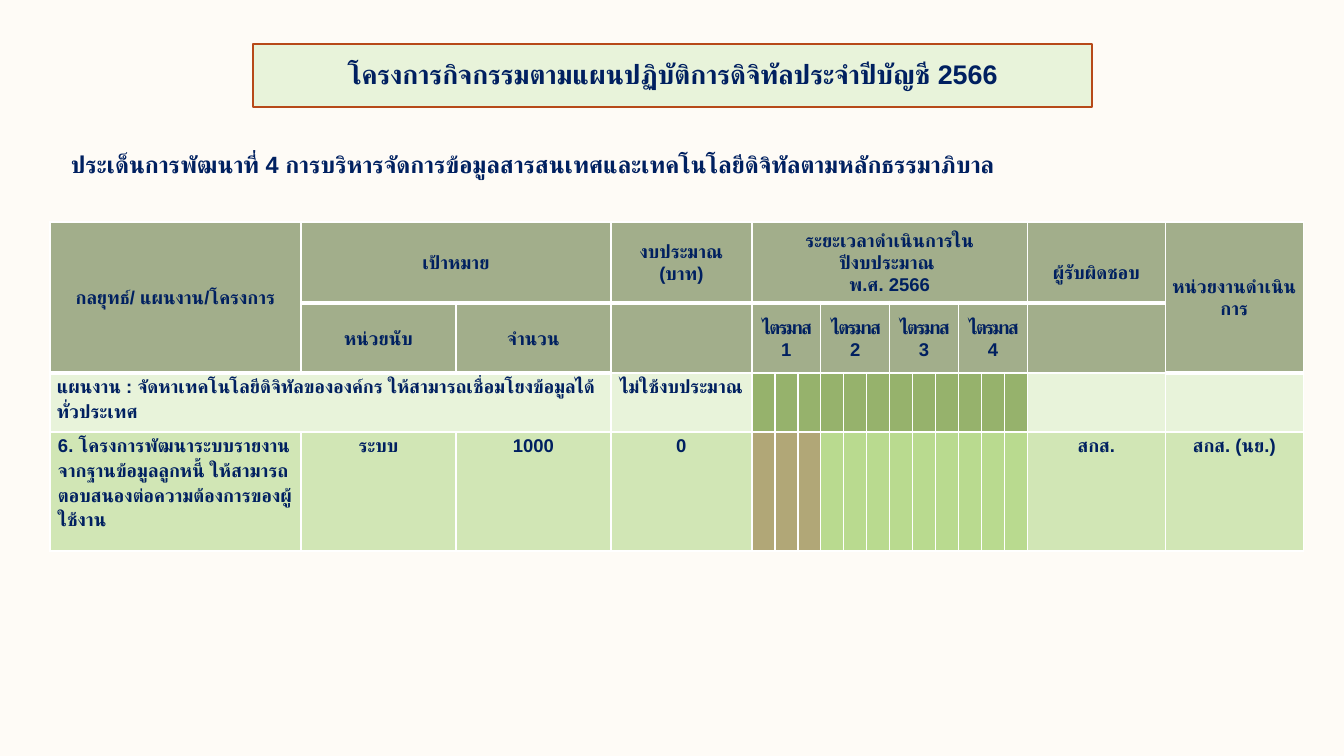
from lxml import etree
from pptx import Presentation
from pptx.dml.color import RGBColor
from pptx.enum.text import MSO_ANCHOR, PP_ALIGN
from pptx.oxml.ns import qn
from pptx.util import Pt

PX = 7557
FONT = "Arial"
LEFT, CENTER = PP_ALIGN.LEFT, PP_ALIGN.CENTER
TOP, MIDDLE = MSO_ANCHOR.TOP, MSO_ANCHOR.MIDDLE
TITLE_ONLY = 5
COLORS = {
    "page": "FEFBF6",
    "ink": "002060",
    "title_line": "B74919",
    "header": "A2AE8B",
    "plan": "E8F3DA",
    "plan_month": "96B26C",
    "project": "D1E6B5",
    "active_month": "B1A777",
    "idle_month": "B9DA8F",
    "border": "FFFFFF",
}
COLUMNS = [251, 155, 155, 141] + [23] * 12 + [138, 138]
ROWS = [81, 70, 59, 119]
FIRST_MONTH, MONTHS, MONTHS_PER_QUARTER = 4, 12, 3
OWNER, UNIT = 16, 17
SPANS = [(0, 0, 1, 0), (0, 1, 0, 2), (0, 4, 0, 15), (0, UNIT, 1, UNIT), (2, 0, 2, 2)]
HEADERS = {
    (0, 0): "กลยุทธ์/ แผนงาน/โครงการ",
    (0, 1): "เป้าหมาย",
    (0, 3): "งบประมาณ\n(บาท)",
    (0, 4): "ระยะเวลาดำเนินการในปีงบประมาณ \vพ.ศ. 2566",
    (0, OWNER): "ผู้รับผิดชอบ",
    (0, UNIT): "หน่วยงานดำเนินการ",
    (1, 1): "หน่วยนับ",
    (1, 2): "จำนวน",
}
DETAILS = {
    (2, 0): "แผนงาน : จัดหาเทคโนโลยีดิจิทัลขององค์กร ให้สามารถเชื่อมโยงข้อมูลได้ทั่วประเทศ",
    (2, 3): "ไม่ใช้งบประมาณ",
    (3, 0): "6. โครงการพัฒนาระบบรายงานจากฐานข้อมูลลูกหนี้ ให้สามารถตอบสนองต่อความต้องการของผู้ใช้งาน",
    (3, 1): "ระบบ",
    (3, 2): "1000",
    (3, 3): "0",
    (3, OWNER): "สกส.",
    (3, UNIT): "สกส. (นย.)",
}


def color(name):
    """Return the named colour."""
    return RGBColor.from_string(COLORS[name])


def write(frame, text, size, align, spacing):
    """Fill a text frame and format its paragraphs and runs."""
    frame.text = text
    for paragraph in frame.paragraphs:
        paragraph.alignment = align
        paragraph.line_spacing = spacing
        for run in paragraph.runs:
            run.font.name = FONT
            run.font.size = Pt(size)
            run.font.bold = True
            run.font.color.rgb = color("ink")
            thai = etree.SubElement(run.font._element, qn("a:cs"))
            thai.set("typeface", FONT)


def add_title(slide, left, top, width, height):
    """Place the framed slide title."""
    title = slide.shapes.title
    title.left, title.top = left * PX, top * PX
    title.width, title.height = width * PX, height * PX
    title.fill.solid()
    title.fill.fore_color.rgb = color("plan")
    title.line.color.rgb = color("title_line")
    title.line.width = Pt(1)
    title.text_frame.vertical_anchor = MIDDLE
    write(title.text_frame, "โครงการกิจกรรมตามแผนปฏิบัติการดิจิทัลประจำปีบัญชี 2566", 16, CENTER, 0.9)


def add_issue(slide, left, top, width, height):
    """Place the development issue above the table."""
    issue = slide.shapes.add_textbox(left * PX, top * PX, width * PX, height * PX)
    frame = issue.text_frame
    frame.word_wrap = True
    frame.vertical_anchor = MIDDLE
    frame.margin_left = frame.margin_right = 10 * PX
    frame.margin_top = frame.margin_bottom = 5 * PX
    write(frame, "ประเด็นการพัฒนาที่ 4 การบริหารจัดการข้อมูลสารสนเทศและเทคโนโลยีดิจิทัลตามหลักธรรมาภิบาล",
          14, LEFT, 1.0)


def cell_color(row, column):
    """Name the fill of a table cell."""
    if row < 2:
        return "header"
    month = column - FIRST_MONTH
    if not 0 <= month < MONTHS:
        return "plan" if row == 2 else "project"
    if row == 2:
        return "plan_month"
    return "active_month" if month < MONTHS_PER_QUARTER else "idle_month"


def set_borders(cell, top, bottom):
    """Draw white cell borders with the given top and bottom widths in points."""
    properties = cell._tc.get_or_add_tcPr()
    for index, (side, width) in enumerate(zip("LRTB", (1, 1, top, bottom))):
        line = etree.Element(qn(f"a:ln{side}"), w=str(Pt(width)))
        fill = etree.SubElement(line, qn("a:solidFill"))
        etree.SubElement(fill, qn("a:srgbClr"), val=COLORS["border"])
        properties.insert(index, line)


def add_plan_table(slide, left, top):
    """Place the project table with its monthly schedule."""
    frame = slide.shapes.add_table(len(ROWS), len(COLUMNS), left * PX, top * PX,
                                   sum(COLUMNS) * PX, sum(ROWS) * PX)
    table = frame.table
    for column, width in zip(table.columns, COLUMNS):
        column.width = width * PX
    for row, height in zip(table.rows, ROWS):
        row.height = height * PX

    headers = dict(HEADERS)
    spans = list(SPANS)
    for quarter in range(MONTHS // MONTHS_PER_QUARTER):
        start = FIRST_MONTH + quarter * MONTHS_PER_QUARTER
        headers[1, start] = f"ไตรมาส {quarter + 1}"
        spans.append((1, start, 1, start + MONTHS_PER_QUARTER - 1))
    for row, column, last_row, last_column in spans:
        table.cell(row, column).merge(table.cell(last_row, last_column))

    for row in range(len(ROWS)):
        for column in range(len(COLUMNS)):
            cell = table.cell(row, column)
            cell.fill.solid()
            cell.fill.fore_color.rgb = color(cell_color(row, column))
            cell.margin_top = cell.margin_bottom = 0
            cell.margin_left = cell.margin_right = (8 if row == 3 else 7) * PX
            tall_header = column in (0, UNIT)
            set_borders(cell, 3 if row == 1 or (row == 2 and tall_header) else 1,
                        3 if row == 0 or (row == 1 and tall_header) else 1)

    for (row, column), text in headers.items():
        cell = table.cell(row, column)
        cell.vertical_anchor = MIDDLE
        write(cell.text_frame, text, 11, CENTER, 1.07)
        if row == 1 and column >= FIRST_MONTH:
            cell.text_frame.paragraphs[0].runs[0].font._element.set("spc", "-100")
    table.cell(0, OWNER).margin_top = 20 * PX

    for (row, column), text in DETAILS.items():
        cell = table.cell(row, column)
        cell.vertical_anchor = TOP
        write(cell.text_frame, text, 11, LEFT if column == 0 else CENTER, 1.2)


def main():
    """Build and save the digital action plan slide."""
    deck = Presentation()
    deck.slide_width, deck.slide_height = 1344 * PX, 756 * PX
    slide = deck.slides.add_slide(deck.slide_layouts[TITLE_ONLY])
    slide.background.fill.solid()
    slide.background.fill.fore_color.rgb = color("page")
    add_title(slide, 253, 44, 839, 63)
    add_issue(slide, 61, 145, 1120, 39)
    add_plan_table(slide, 50, 222)
    deck.save("out.pptx")


if __name__ == "__main__":
    main()
